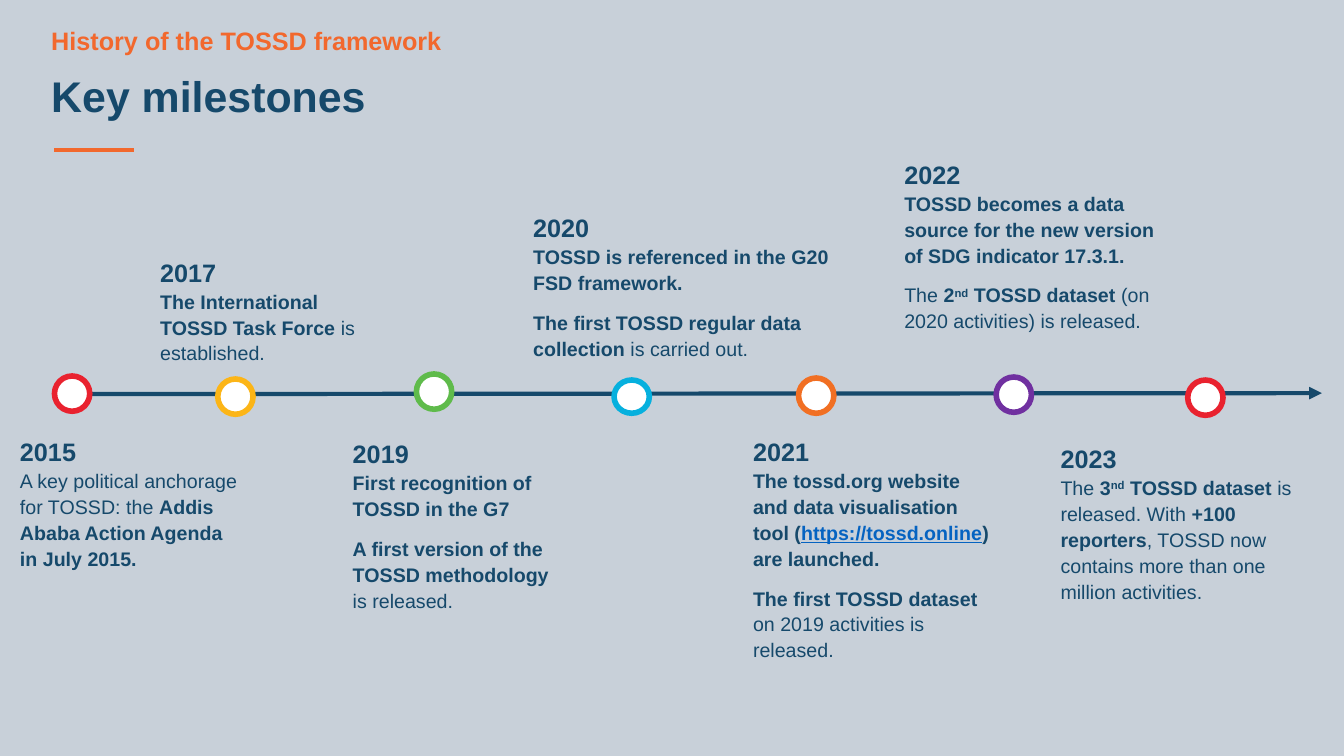
from pptx import Presentation
from pptx.dml.color import RGBColor
from pptx.enum import shapes, text
from pptx.oxml import parse_xml
from pptx.oxml.ns import nsdecls
from pptx.util import Inches, Pt

BACKGROUND = RGBColor(0xC8, 0xD0, 0xD9)
NAVY = RGBColor(0x16, 0x49, 0x6B)
ORANGE = RGBColor(0xF2, 0x68, 0x2D)
LINK = RGBColor(0x05, 0x63, 0xC1)
WHITE = RGBColor(0xFF, 0xFF, 0xFF)
RED = RGBColor(0xE9, 0x22, 0x2F)
YELLOW = RGBColor(0xFC, 0xB5, 0x17)
GREEN = RGBColor(0x5F, 0xBB, 0x4B)
BLUE = RGBColor(0x06, 0xB0, 0xDE)
AMBER = RGBColor(0xF1, 0x6F, 0x23)
PURPLE = RGBColor(0x70, 0x30, 0xA0)

# Run styles
PLAIN, BOLD, SUPER, URL = "plain", "bold", "super", "url"

# Year, text box (left, top, width, height), paragraphs of (text, style) runs
MILESTONES = [
    ("2015", (0.1, 4.25, 2.36, 1.69), [
        [("A key political anchorage for TOSSD: the ", PLAIN),
         ("Addis Ababa Action Agenda in July 2015.", BOLD)]]),
    ("2017", (1.49, 2.47, 2.21, 1.31), [
        [("The International TOSSD Task Force ", BOLD),
         ("is established.", PLAIN)]]),
    ("2019", (3.4, 4.27, 2.28, 2.25), [
        [("First recognition of TOSSD in the G7", BOLD)],
        [("A first version of the TOSSD methodology ", BOLD),
         ("is released.", PLAIN)]]),
    ("2020", (5.19, 2.03, 3.16, 1.71), [
        [("TOSSD is referenced in the G20 FSD framework.", BOLD)],
        [("The first TOSSD regular data collection ", BOLD),
         ("is carried out.", PLAIN)]]),
    ("2021", (7.37, 4.25, 2.62, 2.5), [
        [("The tossd.org website and data visualisation tool (", BOLD),
         ("https://tossd.online", URL),
         (") are launched.", BOLD)],
        [("The first TOSSD dataset ", BOLD),
         ("on 2019 activities is released.", PLAIN)]]),
    ("2022", (8.87, 1.5, 2.72, 2.24), [
        [("TOSSD becomes a data source for the new version of "
          "SDG indicator 17.3.1.", BOLD)],
        [("The ", PLAIN), ("2", BOLD), ("nd", SUPER),
         (" TOSSD dataset ", BOLD),
         ("(on 2020 activities) is released.", PLAIN)]]),
    ("2023", (10.42, 4.32, 2.82, 2.24), [
        [("The ", PLAIN), ("3", BOLD), ("nd", SUPER),
         (" TOSSD dataset ", BOLD),
         ("is released. With ", PLAIN),
         ("+100 reporters", BOLD),
         (", TOSSD now contains more than one million activities.", PLAIN)]]),
]

# Left, top, height, ring colour
MARKERS = [
    (0.54, 3.73, 0.35, RED),
    (2.16, 3.76, 0.35, YELLOW),
    (4.13, 3.71, 0.35, GREEN),
    (6.09, 3.77, 0.33, BLUE),
    (7.92, 3.75, 0.35, AMBER),
    (9.88, 3.74, 0.35, PURPLE),
    (11.78, 3.77, 0.35, RED),
]


def add_box(s, box):
    tf = s.shapes.add_textbox(*map(Inches, box)).text_frame
    tf.word_wrap = True
    return tf


def set_font(p, size, color):
    p.font.name = "Arial"
    p.font.size = Pt(size)
    p.font.color.rgb = color


def add_heading(s, box, words, size, color, spacing=1.0,
                anchor=text.MSO_ANCHOR.TOP):
    tf = add_box(s, box)
    tf.vertical_anchor = anchor
    p = tf.paragraphs[0]
    p.line_spacing = spacing
    set_font(p, size, color)
    p.font.bold = True
    p.add_run().text = words


def add_line(s, start, end, color, arrow=False):
    sp = s.shapes.add_connector(shapes.MSO_CONNECTOR.STRAIGHT,
                                *map(Inches, start + end))
    sp.line.color.rgb = color
    sp.line.width = Pt(3)
    if arrow:
        sp.line._get_or_add_ln().append(
            parse_xml(f'<a:tailEnd {nsdecls("a")} type="triangle"/>'))
    sp._element.spPr.append(parse_xml(f'<a:effectLst {nsdecls("a")}/>'))


def add_marker(s, left, top, height, color):
    sp = s.shapes.add_shape(shapes.MSO_SHAPE.OVAL, Inches(left), Inches(top),
                            Inches(0.35), Inches(height))
    sp.shadow.inherit = False
    sp.fill.solid()
    sp.fill.fore_color.rgb = WHITE
    sp.line.color.rgb = color
    sp.line.width = Pt(4)


def add_run(p, words, style):
    r = p.add_run()
    r.text = words
    r.font.bold = style != PLAIN
    if style == SUPER:
        r.font._element.set("baseline", "30000")
    elif style == URL:
        r.font.underline = True
        r.font.color.rgb = LINK
    return r


def add_milestone(s, year, box, paragraphs):
    tf = add_box(s, box)
    for i, runs in enumerate(paragraphs):
        p = tf.add_paragraph() if i else tf.paragraphs[0]
        p.line_spacing = 1.1
        set_font(p, 14, NAVY)
        if i:
            p.space_before = Pt(10)
        else:
            add_run(p, year, BOLD).font.size = Pt(18)
            p.add_line_break()
        for words, style in runs:
            add_run(p, words, style)


def main():
    prs = Presentation()
    prs.slide_width, prs.slide_height = Inches(13.33), Inches(7.5)
    s = prs.slides.add_slide(prs.slide_layouts[6])
    s.background.fill.solid()
    s.background.fill.fore_color.rgb = BACKGROUND

    # Headings
    add_line(s, (0.54, 1.49), (1.33, 1.49), ORANGE)
    add_heading(s, (0.41, 0.75, 10.78, 0.49), "Key milestones", 30.6, NAVY,
                0.7, text.MSO_ANCHOR.BOTTOM)
    add_heading(s, (0.41, 0.2, 6.79, 0.4), "History of the TOSSD framework",
                18, ORANGE)

    # Timeline
    add_line(s, (0.54, 3.91), (13.11, 3.9), NAVY, arrow=True)
    for marker in MARKERS:
        add_marker(s, *marker)
    for milestone in MILESTONES:
        add_milestone(s, *milestone)

    prs.save("out.pptx")


if __name__ == "__main__":
    main()
